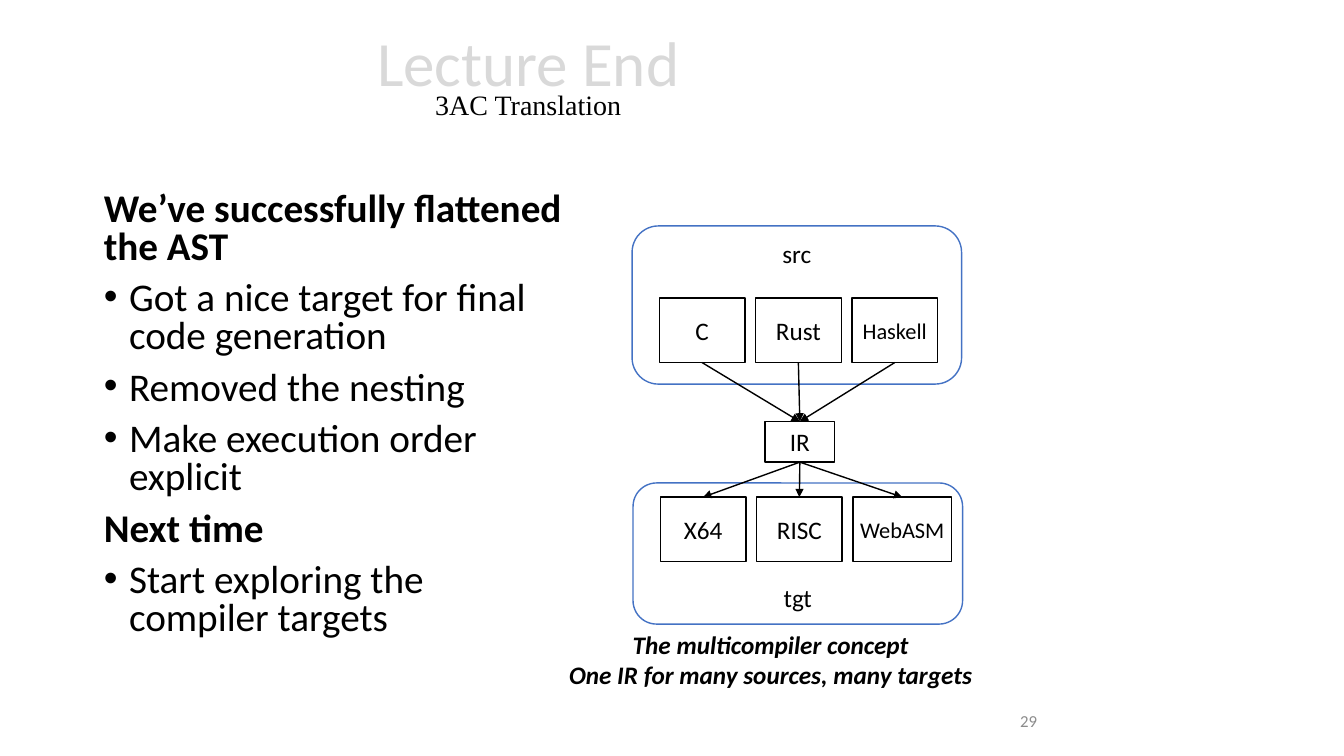
from lxml import etree
from pptx import Presentation
from pptx.dml.color import RGBColor
from pptx.enum.shapes import MSO_CONNECTOR as Connector, MSO_SHAPE as Preset
from pptx.enum.text import MSO_ANCHOR as Anchor, MSO_AUTO_SIZE as AutoSize, PP_ALIGN as Align
from pptx.oxml.ns import qn
from pptx.util import Pt

BLACK, WHITE, BLUE = "000000", "FFFFFF", "4472C4"
TOP, BOTTOM = 0, 2
BOX_WIDTH, BOX_HEIGHT, BOX_STEP = 61.2, 46.1, 68.8


def color(hex_value):
    return RGBColor.from_string(hex_value)


def add_span(para, text, font_color=BLACK, **formats):
    span = para.add_run()
    span.text = text
    span.font.color.rgb = color(font_color)
    for name, value in {"name": "Calibri", "size": Pt(18), **formats}.items():
        setattr(span.font, name, value)


def set_frame(frame, **formats):
    for name, value in {"word_wrap": True, "auto_size": AutoSize.NONE, **formats}.items():
        setattr(frame, name, value)


def place(shape, box):
    for name, value in zip(("left", "top", "width", "height"), box):
        setattr(shape, name, Pt(value))


def add_paras(frame, texts, align, **formats):
    for index, text in enumerate(texts):
        para = frame.add_paragraph() if index else frame.paragraphs[0]
        para.alignment = align
        add_span(para, text, **formats)


def add_box(page, preset, box, text, line=BLACK, size=18, **frame_formats):
    shape = page.shapes.add_shape(preset, *map(Pt, box))
    shape.shadow.inherit = False
    shape.fill.solid()
    shape.fill.fore_color.rgb = color(WHITE)
    shape.line.color.rgb = color(line)
    shape.line.width = Pt(1)
    set_frame(shape.text_frame, **frame_formats)
    add_paras(shape.text_frame, [text], Align.CENTER, size=Pt(size))
    return shape


def add_title(page, box):
    title = page.shapes.title
    place(title, box)
    set_frame(title.text_frame, vertical_anchor=Anchor.MIDDLE)
    para = title.text_frame.paragraphs[0]
    para.alignment, para.line_spacing = Align.CENTER, 0.7
    add_span(para, "Lecture End", "D9D9D9", size=Pt(45))
    para.add_line_break()
    add_span(para, "3AC Translation", name="Times New Roman", size=Pt(20))


def add_summary(page, box, sections):
    """Fill the body with bold headings, each followed by its bullets."""
    body = page.placeholders[1]
    place(body, box)
    frame = body.text_frame
    set_frame(frame, vertical_anchor=Anchor.TOP)
    lines = [(text, text == heading)
             for heading, points in sections.items() for text in (heading, *points)]
    for index, (text, is_heading) in enumerate(lines):
        para = frame.add_paragraph() if index else frame.paragraphs[0]
        para.line_spacing, para.space_before = 0.8, Pt(10)
        add_span(para, text, size=Pt(28), bold=is_heading)
        indent = 0 if is_heading else Pt(18)
        properties = para._p.get_or_add_pPr()
        properties.set("marL", str(indent))
        properties.set("indent", str(-indent))
        if is_heading:
            etree.SubElement(properties, qn("a:buNone"))
        else:
            etree.SubElement(properties, qn("a:buFont"), typeface="Arial")
            etree.SubElement(properties, qn("a:buChar"), char="•")


def add_group(page, box, label, anchor, languages, row_top):
    """Draw a rounded frame and a row of languages in it, given as name, size, width."""
    left, top, _, _ = box
    add_box(page, Preset.ROUNDED_RECTANGLE, box, label, BLUE, vertical_anchor=anchor)
    row = []
    for index, (name, size, width) in enumerate(languages):
        cell = (left + 19.4 + index * BOX_STEP, top + row_top, width, BOX_HEIGHT)
        margins = {"margin_left": 0, "margin_right": 0} if width > BOX_WIDTH else {}
        row.append(add_box(page, Preset.RECTANGLE, cell, name, size=size,
                           vertical_anchor=Anchor.MIDDLE, **margins))
    return row


def add_arrow(page, start, end):
    """Join the bottom of one box to the top of another."""
    arrow = page.shapes.add_connector(Connector.STRAIGHT, 0, 0, 0, 0)
    arrow.begin_connect(start, BOTTOM)
    arrow.end_connect(end, TOP)
    arrow.line.color.rgb = color(BLACK)
    arrow.line.width = Pt(1)
    etree.SubElement(arrow.line._get_or_add_ln(), qn("a:tailEnd"), type="triangle")
    etree.SubElement(arrow._element.spPr, qn("a:effectLst"))


def add_diagram(page, left, top):
    targets = add_group(page, (left + 0.7, top + 183.6, 235.4, 100.8), "tgt", Anchor.BOTTOM,
                        [("X64", 18, BOX_WIDTH), ("RISC", 18, BOX_WIDTH),
                         ("WebASM", 16, 70.6)], 10.1)
    sources = add_group(page, (left, top, 235.4, 113), "src", Anchor.TOP,
                        [("C", 18, BOX_WIDTH), ("Rust", 18, BOX_WIDTH),
                         ("Haskell", 16, BOX_WIDTH)], 51.5)
    middle = add_box(page, Preset.RECTANGLE, (left + 95, top + 139.7, 49.7, 29), "IR",
                     vertical_anchor=Anchor.TOP)
    for source in sources:
        add_arrow(page, source, middle)
    for target in targets:
        add_arrow(page, middle, target)


def add_note(page, box, texts, align, anchor, wrap=True, **formats):
    note = page.shapes.add_textbox(*map(Pt, box))
    set_frame(note.text_frame, vertical_anchor=anchor, word_wrap=wrap)
    add_paras(note.text_frame, texts, align, **formats)


def main():
    deck = Presentation()
    deck.slide_width, deck.slide_height = Pt(960), Pt(540)
    page = deck.slides.add_slide(deck.slide_layouts[1])
    add_title(page, (67, 6.5, 620.6, 104.4))
    add_summary(page, (67, 133.9, 344.9, 342.7), {
        "We’ve successfully flattened the AST": [
            "Got a nice target for final code generation",
            "Removed the nesting",
            "Make execution order explicit"],
        "Next time": ["Start exploring the compiler targets"]})
    add_diagram(page, 451.5, 161.4)
    add_note(page, (398.2, 445.7, 304.6, 51.1),
             ["The multicompiler concept", "One IR for many sources, many targets"],
             Align.CENTER, Anchor.TOP, wrap=False, bold=True, italic=True)
    add_note(page, (532, 500.4, 216, 28.8), ["29"], Align.RIGHT, Anchor.MIDDLE,
             size=Pt(12), font_color="8C8C8C")
    deck.save("out.pptx")


if __name__ == "__main__":
    main()
